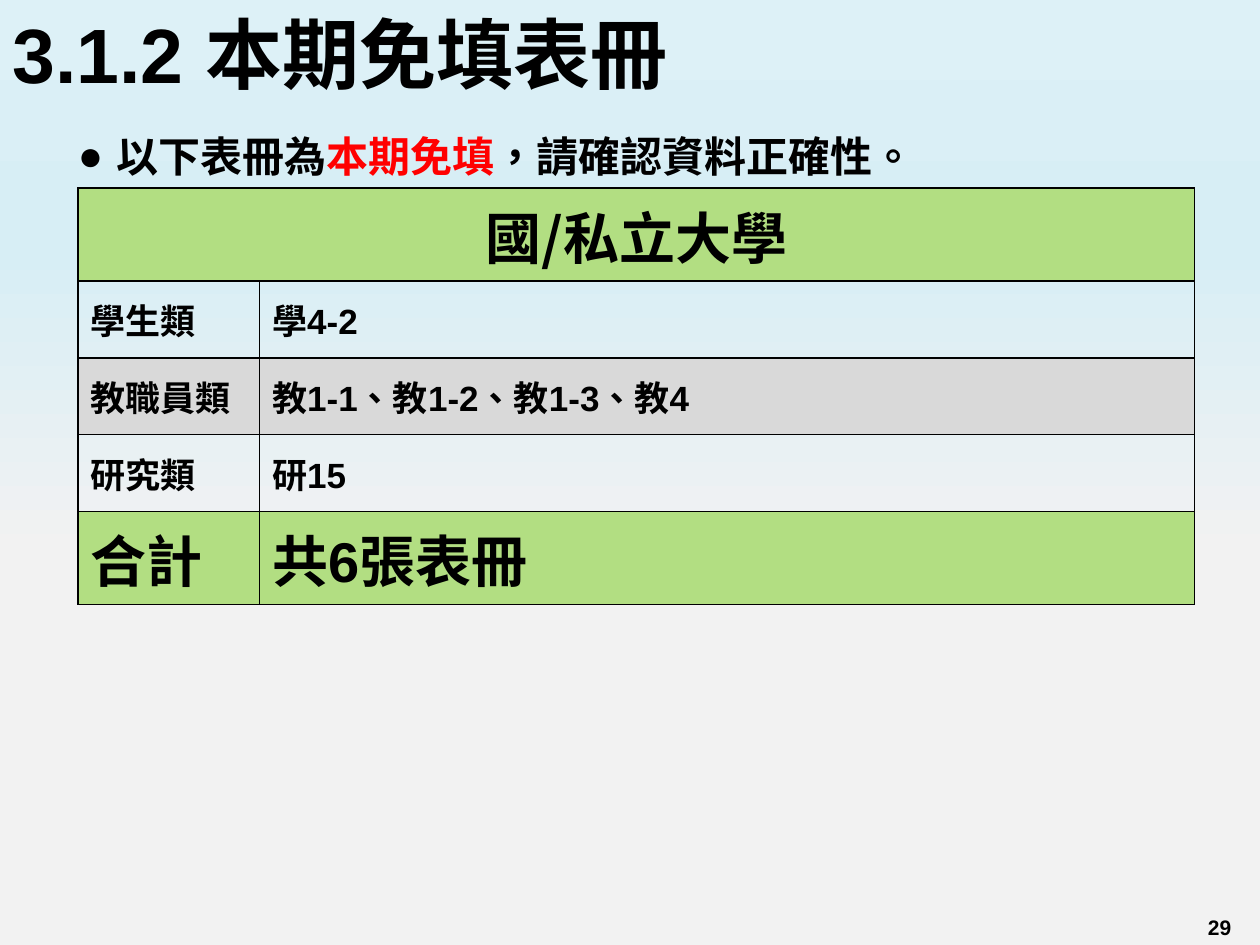
from dataclasses import dataclass

from lxml.etree import SubElement
from pptx import Presentation
from pptx.dml.color import RGBColor
from pptx.enum.lang import MSO_LANGUAGE_ID as Language
from pptx.enum.text import MSO_ANCHOR as Anchor, PP_ALIGN as Align
from pptx.oxml.ns import qn
from pptx.util import Inches, Pt


@dataclass(frozen=True)
class Theme:
    latin: str = "Arial"
    cjk: str = "Noto Sans CJK SC"
    ink: str = "000000"
    alert: str = "FF0000"
    green: str = "B2DE82"
    grey: str = "D9D9D9"
    sky: tuple = ((41, "F2F2F2"), (74, "D7EEF5"), (83, "DAEFF6"), (100, "DDF1F7"))
    title: int = 44
    total: int = 32
    lead: int = 24
    body: int = 20
    number: int = 12


THEME = Theme()

TITLE = "3.1.2 本期免填表冊"
LEAD = [("以下表冊為", THEME.ink), ("本期免填", THEME.alert), ("，請確認資料正確性。", THEME.ink)]
PAGE_NUMBER = "29"
HEADING = "國/私立大學"
CATEGORIES = [
    ("學生類", "學4-2", None),
    ("教職員類", "教1-1、教1-2、教1-3、教4", THEME.grey),
    ("研究類", "研15", None),
]
TOTAL = ("合計", "共6張表冊")
COLUMN_WIDTHS = (1.44, 7.42)
TALL_ROW, CATEGORY_ROW = 0.74, 0.61


def style_run(run, size, color=THEME.ink, latin=THEME.latin):
    run.font.size = Pt(size)
    run.font.bold = True
    run.font.language_id = Language.TRADITIONAL_CHINESE
    run.font.name = latin
    run.font.color.rgb = RGBColor.from_string(color)
    SubElement(run.font._element, qn("a:ea"), typeface=THEME.cjk)


def add_text(slide, box, parts, size, align=Align.LEFT):
    frame = slide.shapes.add_textbox(*map(Inches, box)).text_frame
    frame.word_wrap = True
    frame.vertical_anchor = Anchor.MIDDLE
    paragraph = frame.paragraphs[0]
    paragraph.alignment = align
    for text, color in parts:
        run = paragraph.add_run()
        run.text = text
        style_run(run, size, color)
    return paragraph


def add_bullet(paragraph, indent):
    properties = paragraph._p.get_or_add_pPr()
    properties.set("marL", str(Inches(indent)))
    properties.set("indent", str(-Inches(indent)))
    color = SubElement(properties, qn("a:buClr"))
    SubElement(color, qn("a:srgbClr"), val=THEME.ink)
    SubElement(properties, qn("a:buFont"), typeface=THEME.latin)
    SubElement(properties, qn("a:buChar"), char="●")


def add_borders(cell):
    properties = cell._tc.get_or_add_tcPr()
    for index, side in enumerate(("lnL", "lnR", "lnT", "lnB")):
        line = properties.makeelement(qn(f"a:{side}"), {"w": str(Pt(1))})
        fill = SubElement(line, qn("a:solidFill"))
        SubElement(fill, qn("a:srgbClr"), val=THEME.ink)
        properties.insert(index, line)


def fill_cell(cell, text, size, fill, latin=THEME.latin):
    cell.text = text
    cell.vertical_anchor = Anchor.MIDDLE
    for run in cell.text_frame.paragraphs[0].runs:
        style_run(run, size, latin=latin)
    if fill:
        cell.fill.solid()
        cell.fill.fore_color.rgb = RGBColor.from_string(fill)
    else:
        cell.fill.background()
    add_borders(cell)


def add_forms_table(slide):
    rows = [(*row, THEME.body) for row in CATEGORIES] + [(*TOTAL, THEME.green, THEME.total)]
    heights = [TALL_ROW] + [CATEGORY_ROW] * len(CATEGORIES) + [TALL_ROW]
    box = (0.62, 1.49, sum(COLUMN_WIDTHS), sum(heights))
    forms = slide.shapes.add_table(len(heights), len(COLUMN_WIDTHS), *map(Inches, box)).table
    for column, width in zip(forms.columns, COLUMN_WIDTHS):
        column.width = Inches(width)
    for row, height in zip(forms.rows, heights):
        row.height = Inches(height)

    heading = forms.cell(0, 0)
    heading.merge(forms.cell(0, 1))
    fill_cell(heading, HEADING, THEME.total, THEME.green, THEME.cjk)
    heading.vertical_anchor = Anchor.TOP
    heading.text_frame.paragraphs[0].alignment = Align.CENTER
    add_borders(forms.cell(0, 1))

    for index, (category, codes, fill, size) in enumerate(rows, 1):
        fill_cell(forms.cell(index, 0), category, size, fill)
        fill_cell(forms.cell(index, 1), codes, size, fill)


def paint_background(slide):
    fill = slide.background.fill
    fill.gradient()
    fill.gradient_angle = 90
    stops = fill._fill._gradFill.find(qn("a:gsLst"))
    for stop in list(stops):
        stops.remove(stop)
    for position, color in THEME.sky:
        stop = SubElement(stops, qn("a:gs"), pos=str(position * 1000))
        SubElement(stop, qn("a:srgbClr"), val=color)


def main():
    deck = Presentation()
    deck.slide_width, deck.slide_height = Inches(10), Inches(7.5)
    slide = deck.slides.add_slide(deck.slide_layouts[6])
    paint_background(slide)
    add_text(slide, (9.36, 7.22, 0.64, 0.28), [(PAGE_NUMBER, THEME.ink)], THEME.number, Align.CENTER)
    title = add_text(slide, (0, 0.13, 8.79, 0.67), [(TITLE, THEME.ink)], THEME.title)
    title.line_spacing = 0.9
    add_forms_table(slide)
    lead = add_text(slide, (0.52, 0.94, 6.68, 0.59), LEAD, THEME.lead)
    add_bullet(lead, 0.31)
    deck.save("out.pptx")


if __name__ == "__main__":
    main()
